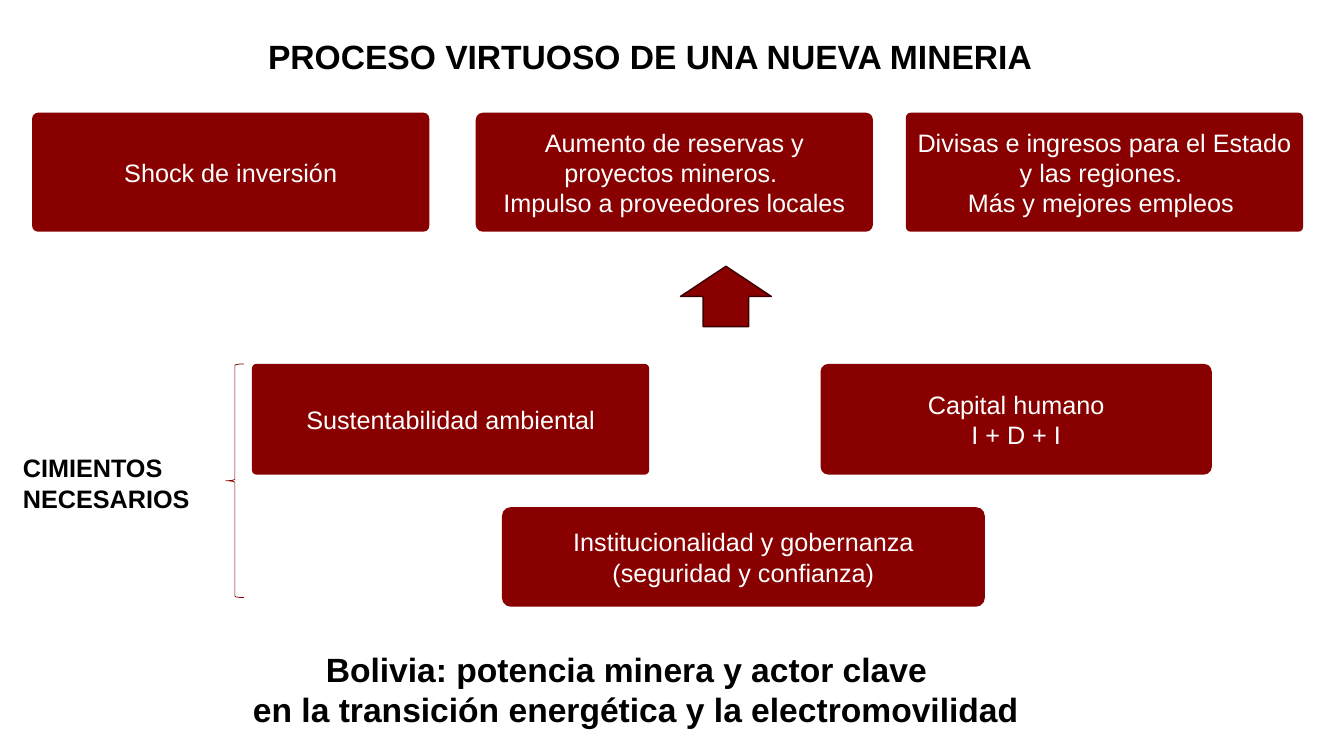
from pptx import Presentation
from pptx.dml.color import RGBColor
from pptx.enum.shapes import MSO_SHAPE
from pptx.enum.text import MSO_ANCHOR, PP_ALIGN
from pptx.util import Cm, Pt

ROUNDED = MSO_SHAPE.ROUNDED_RECTANGLE
UP_ARROW = MSO_SHAPE.UP_ARROW
LEFT_BRACE = MSO_SHAPE.LEFT_BRACE
MIDDLE = MSO_ANCHOR.MIDDLE
TOP = MSO_ANCHOR.TOP
CENTER = PP_ALIGN.CENTER
LEFT = PP_ALIGN.LEFT

FONT = "Arial"
RED = "880000"
DARK_RED = "3C0000"
WHITE = "FFFFFF"
BLACK = "000000"


def color(hex_code):
    return RGBColor.from_string(hex_code)


def write_text(shape, lines, size=18, hex_code=BLACK, bold=False,
               align=CENTER, anchor=TOP):
    frame = shape.text_frame
    frame.word_wrap = True
    frame.vertical_anchor = anchor
    for index, line in enumerate(lines):
        paragraph = frame.paragraphs[0] if index == 0 else frame.add_paragraph()
        paragraph.alignment = align
        run = paragraph.add_run()
        run.text = line
        run.font.name = FONT
        run.font.size = Pt(size)
        run.font.bold = bold
        run.font.color.rgb = color(hex_code)


class SlideBuilder:
    """Adds elements to one slide; every box is (left, top, width, height) in cm."""

    def __init__(self, slide):
        self.slide = slide

    def shape(self, kind, box, fill=None, line=None, line_width=1):
        shape = self.slide.shapes.add_shape(kind, *map(Cm, box))
        shape.shadow.inherit = False
        if fill:
            shape.fill.solid()
            shape.fill.fore_color.rgb = color(fill)
        else:
            shape.fill.background()
        if line:
            shape.line.color.rgb = color(line)
            shape.line.width = Pt(line_width)
        else:
            shape.line.fill.background()
        return shape

    def card(self, box, rounding, lines):
        shape = self.shape(ROUNDED, box, fill=RED)
        shape.adjustments[0] = rounding
        write_text(shape, lines, hex_code=WHITE, anchor=MIDDLE)

    def heading(self, box, lines, **text_format):
        text_box = self.slide.shapes.add_textbox(*map(Cm, box))
        write_text(text_box, lines, bold=True, **text_format)


def main():
    presentation = Presentation()
    presentation.slide_width = Cm(33.87)
    presentation.slide_height = Cm(19.05)
    builder = SlideBuilder(
        presentation.slides.add_slide(presentation.slide_layouts[6]))

    builder.heading((5.97, 0.79, 21.03, 1.27),
                    ["PROCESO VIRTUOSO DE UNA NUEVA MINERIA "], size=24)

    card_width = 10.01
    results = [
        (0.81, 0.05, ["Shock de inversión"]),
        (11.99, 0.06, ["Aumento de reservas y proyectos mineros. ",
                       "Impulso a proveedores locales"]),
        (22.83, 0.04, ["Divisas e ingresos para el Estado y las regiones. ",
                       "Más y mejores empleos "]),
    ]
    for left, rounding, lines in results:
        builder.card((left, 2.84, card_width, 3), rounding, lines)

    foundations_top = 9.17
    foundations = [
        ((6.35, foundations_top, card_width, 2.79), 0.04,
         ["Sustentabilidad ambiental"]),
        ((20.68, foundations_top, 9.86, 2.79), 0.07,
         ["Capital humano", "I + D + I"]),
        ((12.65, 12.78, 12.17, 2.51), 0.09,
         ["Institucionalidad y gobernanza", "(seguridad y confianza)"]),
    ]
    for box, rounding, lines in foundations:
        builder.card(box, rounding, lines)

    builder.heading((0.33, 11.28, 5.36, 1.8), ["CIMIENTOS", "NECESARIOS"],
                    align=LEFT)
    builder.heading((3.99, 16.23, 23.83, 2.31),
                    ["Bolivia: potencia minera y actor clave ",
                     " en la transición energética y la electromovilidad"],
                    size=24)
    builder.shape(UP_ARROW, (17.15, 6.71, 2.29, 1.52), fill=RED, line=DARK_RED)
    builder.shape(LEFT_BRACE, (5.69, foundations_top, 0.46, 5.89),
                  line=RED, line_width=0.5)

    presentation.save("out.pptx")


if __name__ == "__main__":
    main()
